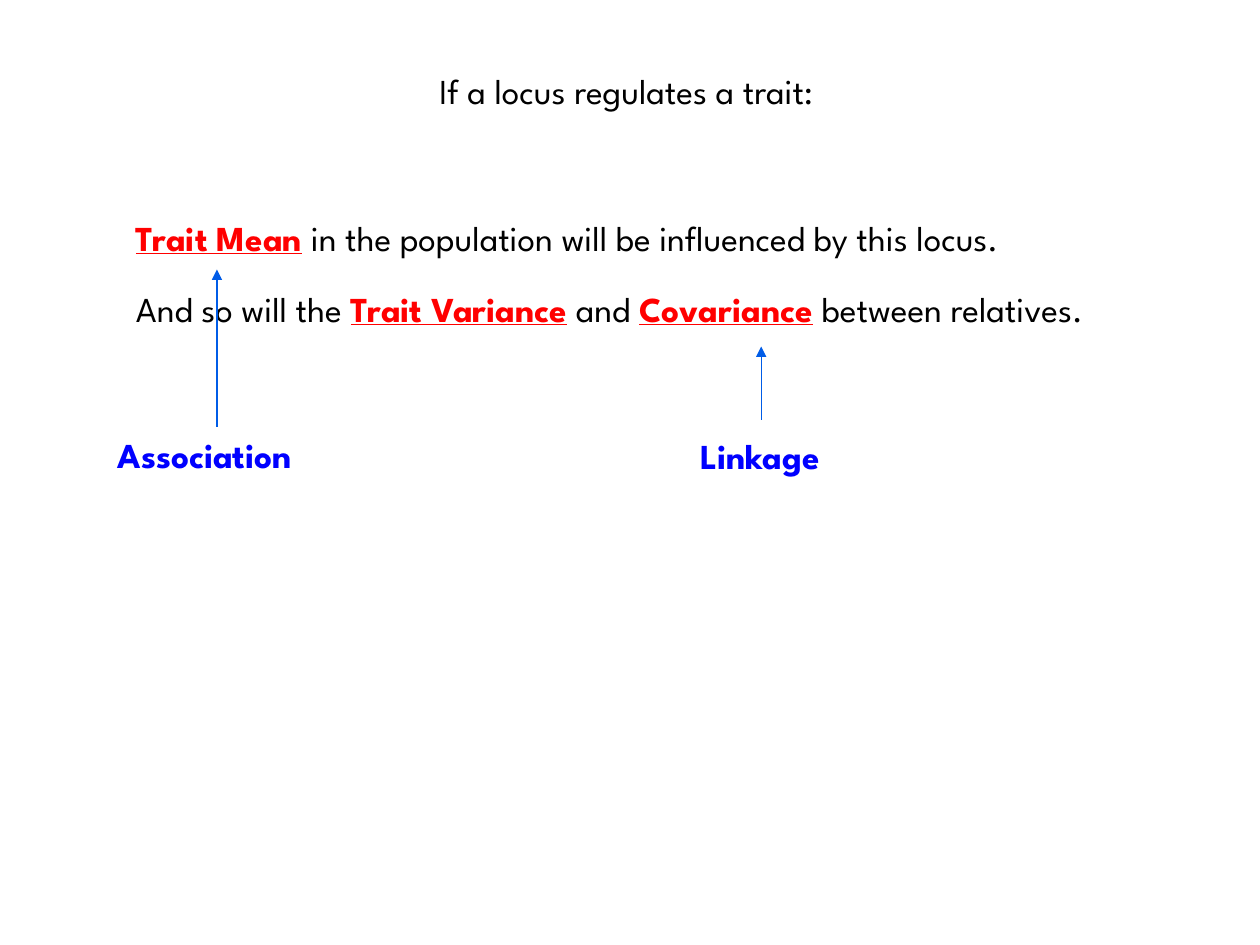
"""Build a slide on how a locus affects trait mean, variance and covariance."""
from dataclasses import dataclass

import pptx
import pptx.dml.color
import pptx.enum.shapes
import pptx.enum.text
import pptx.oxml
import pptx.oxml.ns
import pptx.shapes.base
import pptx.slide
import pptx.text.text
import pptx.util

Pt = pptx.util.Pt
Color = pptx.dml.color.RGBColor
Align = pptx.enum.text.PP_ALIGN


@dataclass(frozen=True)
class Theme:
    """Colours and type sizes of the slide."""
    font: str = "League Spartan"
    size: float = 20
    text: str = "000000"
    term: str = "FF0000"
    label: str = "0000FF"
    arrow: str = "005CE7"
    arrow_width: float = 0.75


@dataclass(frozen=True)
class Area:
    """A rectangle in points."""
    left: float
    top: float
    width: float
    height: float = 31.7


@dataclass(frozen=True)
class Statement:
    """A sentence whose odd phrases are highlighted terms."""
    area: Area
    phrases: tuple[str, ...]


@dataclass(frozen=True)
class Method:
    """A named method with an arrow up to the term it tests."""
    name: str
    area: Area
    arrow_x: float
    arrow_start: float
    arrow_end: float


THEME = Theme()
TITLE = "If a locus regulates a trait:"
TITLE_AREA = Area(120, 36, 476)
STATEMENTS = (
    Statement(Area(70.5, 120, 576),
              ("", "Trait Mean", " in the population will be influenced by this locus.")),
    Statement(Area(70.5, 160.5, 612),
              ("And so will the ", "Trait Variance", " and ", "Covariance",
               " between relatives.")),
)
METHODS = (
    Method("Association", Area(60, 244, 129), 124, 244, 154),
    Method("Linkage", Area(393, 244.8, 91), 435, 240, 198),
)


def add_span(para: pptx.text.text._Paragraph, text: str, *, color: str = THEME.text,
             bold: bool = False, underline: bool = False) -> None:
    """Append formatted text to a paragraph."""
    span = para.add_run()
    span.text = text
    span.font.name = THEME.font
    span.font.size = Pt(THEME.size)
    span.font.color.rgb = Color.from_string(color)
    span.font.bold = bold
    span.font.underline = underline


def prepare_box(box: pptx.shapes.base.BaseShape, area: Area, *, wrap: bool = True,
                align: Align = Align.LEFT) -> pptx.text.text._Paragraph:
    """Place a text shape and return its unbulleted first paragraph."""
    box.left, box.top = Pt(area.left), Pt(area.top)
    box.width, box.height = Pt(area.width), Pt(area.height)
    frame = box.text_frame
    frame.auto_size = pptx.enum.text.MSO_AUTO_SIZE.NONE
    frame.vertical_anchor = pptx.enum.text.MSO_ANCHOR.TOP
    frame.word_wrap = wrap
    para = frame.paragraphs[0]
    para.alignment = align
    para.space_before = Pt(0)
    properties = para._p.get_or_add_pPr()
    properties.set("marL", "0")
    properties.set("indent", "0")
    properties.append(pptx.oxml.parse_xml(f"<a:buNone {pptx.oxml.ns.nsdecls('a')}/>"))
    return para


def add_statement(box: pptx.shapes.base.BaseShape, statement: Statement) -> None:
    """Write a statement with its terms highlighted."""
    para = prepare_box(box, statement.area)
    for index, phrase in enumerate(statement.phrases):
        if index % 2:
            add_span(para, phrase, color=THEME.term, bold=True, underline=True)
        elif phrase:
            add_span(para, phrase)


def add_method(page: pptx.slide.Slide, method: Method) -> None:
    """Draw a method label and its upward arrow."""
    box = page.shapes.add_textbox(0, 0, 0, 0)
    para = prepare_box(box, method.area, wrap=False)
    add_span(para, method.name, color=THEME.label, bold=True)
    arrow = page.shapes.add_connector(
        pptx.enum.shapes.MSO_CONNECTOR.STRAIGHT,
        Pt(method.arrow_x), Pt(method.arrow_start),
        Pt(method.arrow_x), Pt(method.arrow_end))
    arrow.line.color.rgb = Color.from_string(THEME.arrow)
    arrow.line.width = Pt(THEME.arrow_width)
    namespace = pptx.oxml.ns.nsdecls("a")
    properties = arrow._element.spPr
    properties.get_or_add_ln().append(
        pptx.oxml.parse_xml(f'<a:tailEnd {namespace} type="triangle"/>'))
    properties.append(pptx.oxml.parse_xml(f"<a:effectLst {namespace}/>"))


def main() -> None:
    """Build and save the deck."""
    deck = pptx.Presentation()
    deck.slide_width, deck.slide_height = Pt(720), Pt(540)
    page = deck.slides.add_slide(deck.slide_layouts.get_by_name("Two Content"))
    title, *bodies = page.placeholders
    add_span(prepare_box(title, TITLE_AREA, align=Align.CENTER), TITLE)
    for body, statement in zip(bodies, STATEMENTS):
        add_statement(body, statement)
    for method in METHODS:
        add_method(page, method)
    deck.save("out.pptx")


if __name__ == "__main__":
    main()
